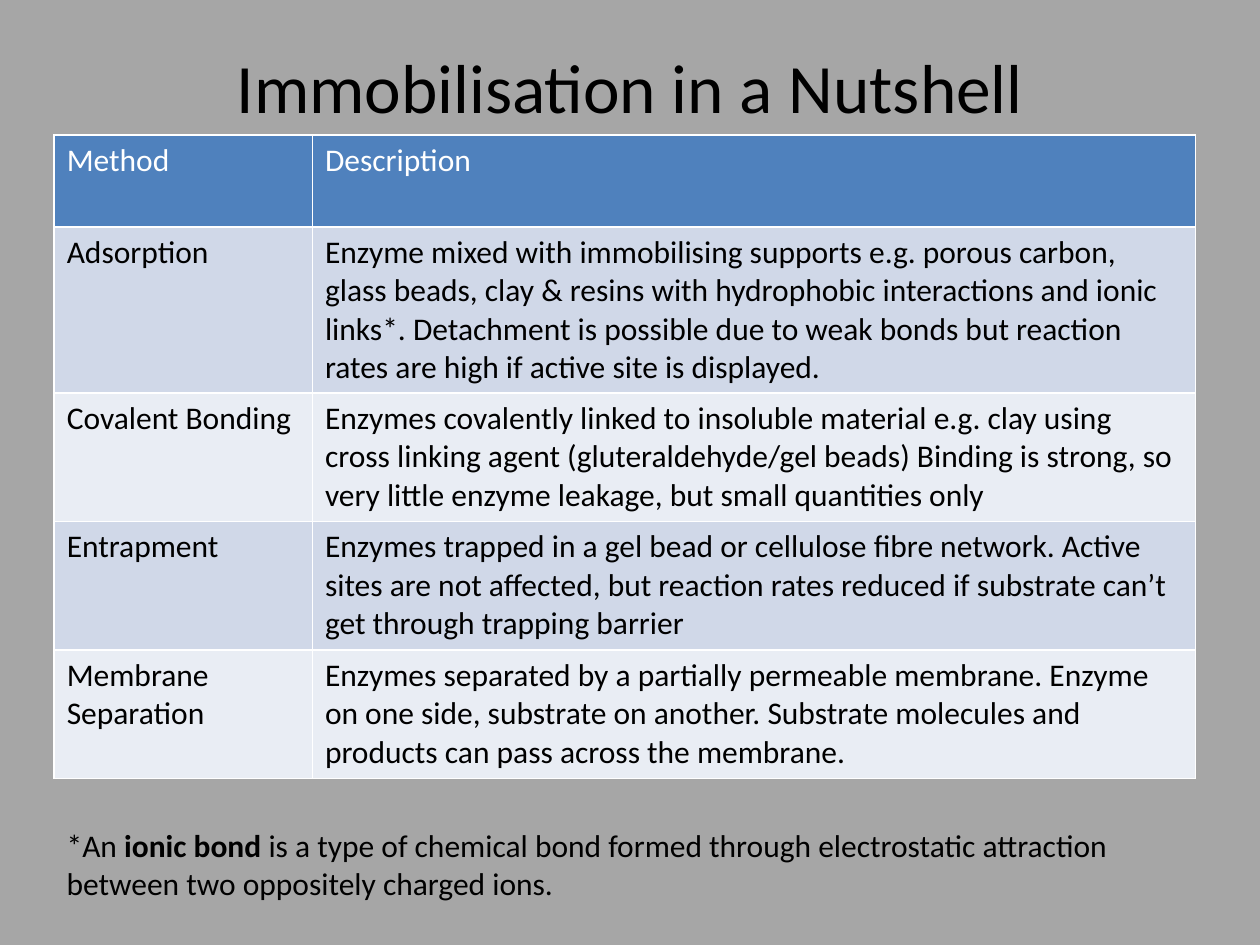
from lxml.etree import SubElement
from pptx import Presentation
from pptx.dml.color import RGBColor
from pptx.enum.text import MSO_ANCHOR as Anchor, PP_ALIGN as Align
from pptx.oxml.ns import qn
from pptx.util import Inches, Pt

ROWS = [
    ("Method", "Description"),
    ("Adsorption",
     "Enzyme mixed with immobilising supports e.g. porous carbon, glass beads, "
     "clay & resins with hydrophobic interactions and ionic links*. Detachment is "
     "possible due to weak bonds but reaction rates are high if active site is displayed."),
    ("Covalent Bonding",
     "Enzymes covalently linked to insoluble material e.g. clay using cross linking "
     "agent (gluteraldehyde/gel beads) Binding is strong, so very little enzyme "
     "leakage, but small quantities only"),
    ("Entrapment",
     "Enzymes trapped in a gel bead or cellulose fibre network. Active sites are not "
     "affected, but reaction rates reduced if substrate can’t get through trapping barrier"),
    ("Membrane Separation",
     "Enzymes separated by a partially permeable membrane. Enzyme on one side, "
     "substrate on another. Substrate molecules and products can pass across the membrane."),
]
NOTE = [("*An ", False), ("ionic bond", True),
        (" is a type of chemical bond formed through electrostatic attraction "
         "between two oppositely charged ions.", False)]
HEIGHTS = [0.73, 1.32, 1.02, 1.02, 1.02]
WIDTHS = [2.05, 7.01]
LEFT = 0.43


def rgb(code):
    return RGBColor.from_string(code)


def write(para, text, size=18, color="000000", bold=False):
    run = para.add_run()
    run.text = text
    run.font.color.rgb = rgb(color)
    look = {"name": "Calibri", "size": Pt(size), "bold": bold}
    for key, value in look.items():
        setattr(run.font, key, value)


deck = Presentation()
deck.slide_width, deck.slide_height = Inches(10), Inches(7.5)
slide = deck.slides.add_slide(deck.slide_layouts[6])
slide.background.fill.solid()
slide.background.fill.fore_color.rgb = rgb("A6A6A6")

# Title
title = slide.shapes.add_textbox(*map(Inches, (0.5, 0.3, 9, 0.77))).text_frame
title.word_wrap = True
title.vertical_anchor = Anchor.MIDDLE
title.paragraphs[0].alignment = Align.CENTER
write(title.paragraphs[0], "Immobilisation in a Nutshell", 39.6)

# Table of methods
box = map(Inches, (LEFT, 1.07, sum(WIDTHS), sum(HEIGHTS)))
table = slide.shapes.add_table(len(ROWS), len(WIDTHS), *box).table
for col, width in zip(table.columns, WIDTHS):
    col.width = Inches(width)
for r, (texts, height) in enumerate(zip(ROWS, HEIGHTS)):
    table.rows[r].height = Inches(height)
    fill = "4F81BD" if r == 0 else ("E9EDF4", "D0D8E8")[r % 2]
    for c, text in enumerate(texts):
        cell = table.cell(r, c)
        write(cell.text_frame.paragraphs[0], text, color="000000" if r else "FFFFFF")
        props = cell._tc.get_or_add_tcPr()
        for side in ("lnL", "lnR", "lnT", "lnB"):
            line = SubElement(props, qn(f"a:{side}"), w=str(Pt(1)))
            paint = SubElement(line, qn("a:solidFill"))
            SubElement(paint, qn("a:srgbClr"), val="FFFFFF")
        cell.fill.solid()
        cell.fill.fore_color.rgb = rgb(fill)

# Footnote
note = slide.shapes.add_textbox(*map(Inches, (LEFT, 6.51, 8.98, 0.71))).text_frame
note.word_wrap = True
for text, bold in NOTE:
    write(note.paragraphs[0], text, bold=bold)

deck.save("out.pptx")
